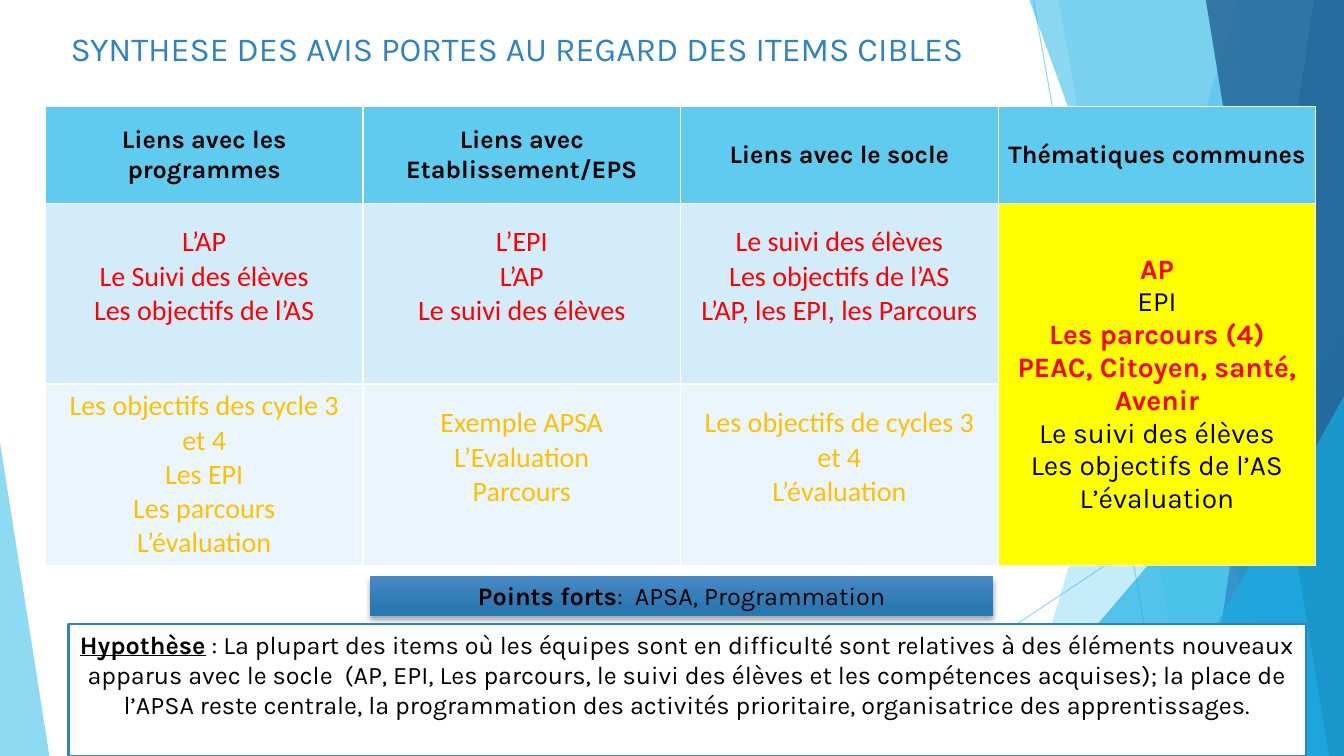
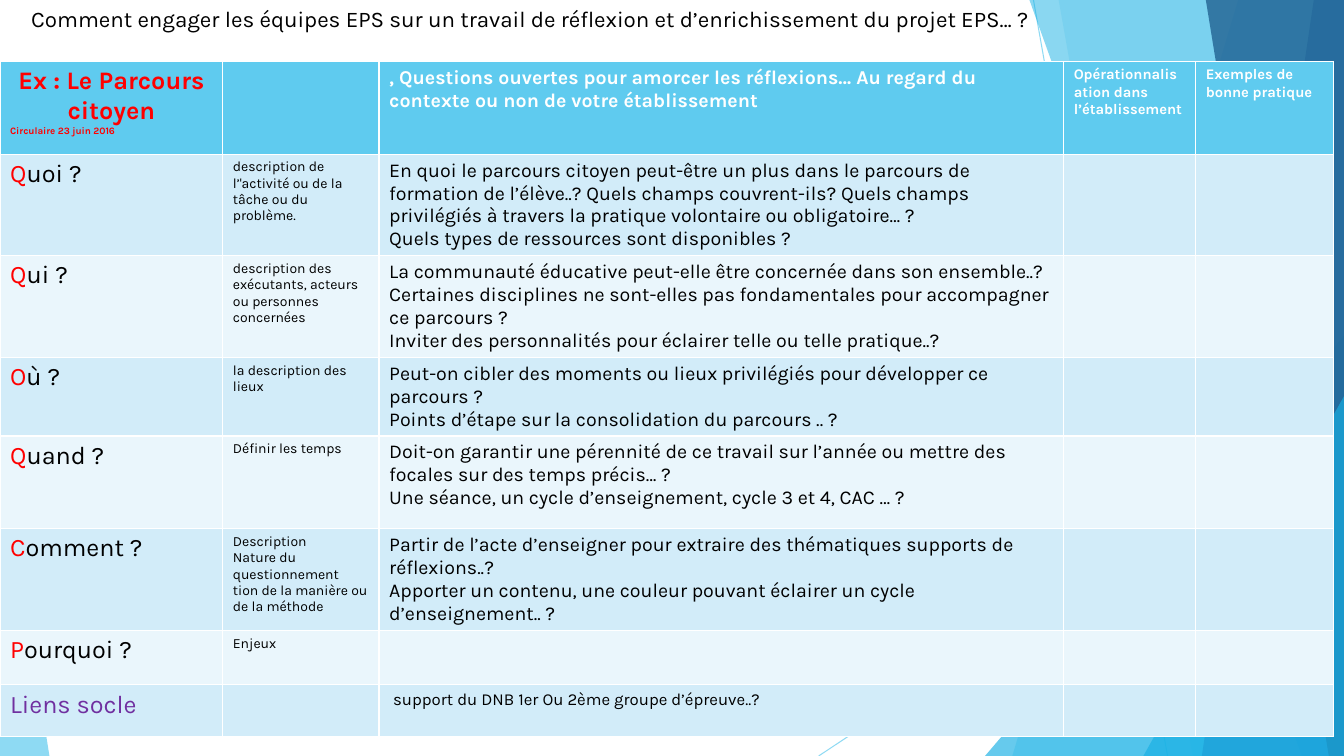
from lxml.etree import SubElement
from pptx import Presentation
from pptx.dml.color import RGBColor
from pptx.enum.shapes import MSO_CONNECTOR, MSO_SHAPE
from pptx.enum.text import MSO_ANCHOR as ANCHOR, MSO_AUTO_SIZE, PP_ALIGN as ALIGN
from pptx.oxml.ns import qn
from pptx.util import Inches, Pt

WIDTH, HEIGHT = 13.33, 7.5
TITLE_ONLY = 5

SKY = RGBColor(0x5F, 0xCB, 0xEF)
CYAN = RGBColor(0x17, 0xB0, 0xE4)
BLUE = RGBColor(0x2E, 0x83, 0xC3)
NAVY = RGBColor(0x22, 0x62, 0x92)
BANNER_TOP = RGBColor(0x4A, 0x8B, 0xC6)
BANNER_BOTTOM = RGBColor(0x2A, 0x78, 0xB2)
BANDS = RGBColor(0xD2, 0xEC, 0xF9), RGBColor(0xEA, 0xF6, 0xFC)
WHITE = RGBColor(0xFF, 0xFF, 0xFF)
BLACK = RGBColor(0, 0, 0)
RED = RGBColor(0xFF, 0, 0)
YELLOW = RGBColor(0xFF, 0xFF, 0)
AMBER = RGBColor(0xFF, 0xC0, 0)
PURPLE = RGBColor(0x70, 0x30, 0xA0)

STRONG = dict(bold=True, color=RED)

THEME_HEADERS = ["Liens avec les programmes", "Liens avec Etablissement/EPS",
                 "Liens avec le socle", "Thématiques communes"]
THEME_ROWS = [
    (RED, [["L’AP", "Le Suivi des élèves", "Les objectifs de l’AS"],
           ["L’EPI", "L’AP", "Le suivi des élèves"],
           ["Le suivi des élèves", "Les objectifs de l’AS", "L’AP, les EPI, les Parcours"]]),
    (AMBER, [["Les objectifs des cycle 3 et 4", "Les EPI", "Les parcours", "L’évaluation"],
             ["Exemple APSA", "L’Evaluation", "Parcours"],
             ["Les objectifs de cycles 3 et 4", "L’évaluation"]]),
]
COMMON_THEMES = [
    [("AP", STRONG)], "EPI", [("Les parcours (4)", STRONG)],
    [("PEAC, Citoyen, santé, Avenir", STRONG)],
    "Le suivi des élèves", "Les objectifs de l’AS", "L’évaluation",
]
HYPOTHESIS = (" : La plupart des items où les équipes sont en difficulté sont relatives à des "
              "éléments nouveaux apparus avec le socle  (AP, EPI, Les parcours, le suivi des "
              "élèves et les compétences acquises); la place de l’APSA reste centrale, la "
              "programmation des activités prioritaire, organisatrice des apprentissages.")

QUESTION_HEADERS = {
    2: (", Questions ouvertes pour amorcer les réflexions… Au regard du contexte ou non "
        "de votre établissement", 14),
    3: ("Opérationnalisation dans l’établissement", 10.5),
    4: ("Exemples de bonne pratique", 10.5),
}
QUESTION_ROWS = [
    ("Quoi ?", ["description de l’'activité ou de la tâche ou du problème."],
     ["En quoi le parcours citoyen peut-être un plus dans le parcours de formation de "
      "l’élève..? Quels champs couvrent-ils? Quels champs privilégiés à travers la pratique "
      "volontaire ou obligatoire… ?",
      "Quels types de ressources sont disponibles ?"]),
    ("Qui ?", ["description des exécutants, acteurs ou personnes concernées"],
     ["La communauté éducative peut-elle être concernée dans son ensemble..?",
      "Certaines disciplines ne sont-elles pas fondamentales pour accompagner ce parcours ?",
      "Inviter des personnalités pour éclairer telle ou telle pratique..?"]),
    ("Où ?", ["la description des lieux"],
     ["Peut-on cibler des moments ou lieux privilégiés pour développer ce parcours ?",
      "Points d’étape sur la consolidation du parcours .. ?"]),
    ("Quand ?", ["Définir les temps"],
     ["Doit-on garantir une pérennité de ce travail sur l’année ou mettre des focales sur "
      "des temps précis… ?",
      "Une séance, un cycle d’enseignement, cycle 3 et 4, CAC … ?"]),
    ("Comment ?", ["Description", "Nature du questionnement",
                   "tion de la manière ou de la méthode"],
     ["Partir de l’acte d’enseigner pour extraire des thématiques supports de réflexions..?",
      "Apporter un contenu, une couleur pouvant éclairer un cycle d’enseignement.. ?"]),
    ("Pourquoi ?", ["Enjeux"], []),
]


def write(tf, paragraphs, align=ALIGN.LEFT, **base):
    """Fill a text frame; a paragraph is a string or a list of (text, format) runs."""
    tf.word_wrap = True
    for i, runs in enumerate(paragraphs):
        p = tf.add_paragraph() if i else tf.paragraphs[0]
        p.alignment = align
        for text, extra in [(runs, {})] if isinstance(runs, str) else runs:
            fmt = dict(font="Karla", size=18, color=BLACK, bold=False, underline=False)
            fmt.update(base, **extra)
            r = p.add_run()
            r.text = text
            r.font.name = fmt["font"]
            r.font.size = Pt(fmt["size"])
            r.font.color.rgb = fmt["color"]
            r.font.bold = fmt["bold"]
            r.font.underline = fmt["underline"]


def set_opacity(sp, percent):
    for color in sp.element.iter(qn("a:srgbClr")):
        SubElement(color, qn("a:alpha"), val=str(percent * 1000))


def paint(sp, color, opacity):
    sp.shadow.inherit = False
    sp.fill.solid()
    sp.fill.fore_color.rgb = color
    sp.line.fill.background()
    set_opacity(sp, opacity)


def add_ray(shapes, *ends):
    line = shapes.add_connector(MSO_CONNECTOR.STRAIGHT, *map(Inches, ends))
    line.line.color.rgb = SKY
    line.line.width = Pt(0.75)
    set_opacity(line, 70)
    SubElement(line.element.spPr, qn("a:effectLst"))


def add_facet(shapes, top_x, bottom_x, color, opacity):
    """Draw a panel from a slanted left edge to the right side of the slide."""
    corners = [(top_x, 0), (WIDTH, 0), (WIDTH, HEIGHT), (bottom_x, HEIGHT)]
    points = [(Inches(x), Inches(y)) for x, y in corners]
    builder = shapes.build_freeform(*points[0])
    builder.add_line_segments(points[1:], close=True)
    paint(builder.convert_to_shape(), color, opacity)


def add_corner(shapes, left, top, width, peak, color, opacity):
    """Draw a triangle standing on the bottom of the slide."""
    sp = shapes.add_shape(MSO_SHAPE.ISOSCELES_TRIANGLE, Inches(left), Inches(top),
                          Inches(width), Inches(HEIGHT - top))
    sp.adjustments[0] = peak
    paint(sp, color, opacity)


def decorate_master(prs, slide):
    """Draw the facets on a slide as one group and move it to the back of the master."""
    group = slide.shapes.add_group_shape()
    shapes = group.shapes
    add_ray(shapes, 10.25, 0, 11.58, HEIGHT)
    add_ray(shapes, WIDTH, 4.03, 8.12, HEIGHT)
    add_facet(shapes, 12.28, 10.04, SKY, 36)
    add_facet(shapes, 10.5, 11.83, SKY, 20)
    add_corner(shapes, 9.77, 3.33, 3.56, 1, CYAN, 66)
    add_facet(shapes, 10.21, 12.91, CYAN, 50)
    add_facet(shapes, 13.03, 11.92, BLUE, 70)
    add_facet(shapes, 11.96, 13.18, NAVY, 80)
    add_corner(shapes, 11.34, 3.93, 1.99, 1, CYAN, 66)
    add_corner(shapes, 0, 4.39, 0.49, 0, SKY, 70)
    for number, props in enumerate(group.element.xpath(".//p:cNvPr"), start=101):
        props.set("id", str(number))
    prs.slide_master.shapes.element.insert(2, group.element)


def set_title(slide, text, box, **fmt):
    title = slide.shapes.title
    title.left, title.top, title.width, title.height = map(Inches, box)
    tf = title.text_frame
    tf.auto_size = MSO_AUTO_SIZE.NONE
    tf.vertical_anchor = ANCHOR.TOP
    write(tf, [text], **fmt)


def add_grid(slide, left, top, columns, rows):
    """Add a table with a sky-blue header and two alternating row colours."""
    frame = slide.shapes.add_table(len(rows), len(columns), Inches(left), Inches(top),
                                   Inches(sum(columns)), Inches(sum(rows)))
    table = frame.table
    for column, width in zip(table.columns, columns):
        column.width = Inches(width)
    for i, (row, height) in enumerate(zip(table.rows, rows)):
        row.height = Inches(height)
        for cell in row.cells:
            cell.fill.solid()
            cell.fill.fore_color.rgb = BANDS[(i - 1) % 2] if i else SKY
    return table


def add_theme_table(slide, left, top):
    table = add_grid(slide, left, top, [3.15] * 4, [0.96, 1.79, 1.79])
    for col, header in enumerate(THEME_HEADERS):
        write(table.cell(0, col).text_frame, [header], ALIGN.CENTER, bold=True)
    for row, (color, cells) in enumerate(THEME_ROWS, start=1):
        for col, lines in enumerate(cells):
            cell = table.cell(row, col)
            write(cell.text_frame, lines, ALIGN.CENTER, font="Calibri", size=20, color=color)
            if len(lines) < 4:
                cell.margin_bottom = Inches(0.39)
    common = table.cell(1, 3)
    common.merge(table.cell(2, 3))
    common.fill.fore_color.rgb = YELLOW
    write(common.text_frame, COMMON_THEMES, ALIGN.CENTER, size=20)
    for row in table.rows:
        for cell in row.cells:
            cell.vertical_anchor = ANCHOR.MIDDLE


def add_box(slide, box, runs, anchor):
    sp = slide.shapes.add_shape(MSO_SHAPE.RECTANGLE, *map(Inches, box))
    sp.shadow.inherit = False
    sp.text_frame.vertical_anchor = anchor
    write(sp.text_frame, [runs], ALIGN.CENTER)
    return sp


def add_strengths_banner(slide, box):
    sp = add_box(slide, box, [("Points forts", dict(bold=True)),
                              (":  APSA, Programmation", {})], ANCHOR.MIDDLE)
    sp.line.fill.background()
    sp.fill.gradient()
    sp.fill.gradient_angle = 270
    stops = [(0, BANNER_TOP), (0.78, BANNER_BOTTOM)]
    for stop, (position, color) in zip(sp.fill.gradient_stops, stops):
        stop.position = position
        stop.color.rgb = color
    effects = sp.element.spPr.find(qn("a:effectLst"))
    shadow = SubElement(effects, qn("a:outerShdw"), blurRad=str(Pt(4)), dist=str(Pt(3)),
                        dir="5400000", rotWithShape="0")
    color = SubElement(shadow, qn("a:srgbClr"), val=str(BLACK))
    SubElement(color, qn("a:alpha"), val="35000")


def add_hypothesis(slide, box):
    sp = add_box(slide, box, [("Hypothèse", dict(bold=True, underline=True)),
                              (HYPOTHESIS, {})], ANCHOR.TOP)
    sp.fill.solid()
    sp.fill.fore_color.rgb = WHITE
    sp.line.color.rgb = BLUE
    sp.line.width = Pt(1.5)


def add_question_table(slide, left, top):
    table = add_grid(slide, left, top, [2.21, 1.55, 6.79, 1.31, 1.37],
                     [0.92, 0.92, 0.98, 0.66, 0.92, 1.01, 0.54, 0.51])
    corner = table.cell(0, 0).text_frame
    write(corner, ["Ex : Le Parcours citoyen",
                   [("Circulaire 23 juin 2016", dict(size=7))]], **STRONG)
    corner.paragraphs[0].alignment = ALIGN.CENTER
    for col, (header, size) in QUESTION_HEADERS.items():
        write(table.cell(0, col).text_frame, [header], size=size, bold=True, color=WHITE)
    for row, (word, hints, questions) in enumerate(QUESTION_ROWS, start=1):
        initial = (word[0], dict(color=RED))
        write(table.cell(row, 0).text_frame, [[initial, (word[1:], {})]])
        write(table.cell(row, 1).text_frame, hints, size=10)
        write(table.cell(row, 2).text_frame, questions, size=14)
    last = len(table.rows) - 1
    write(table.cell(last, 0).text_frame, ["Liens socle"], color=PURPLE)
    write(table.cell(last, 2).text_frame,
          [" support du DNB 1er Ou 2ème groupe d’épreuve..?"], size=12)


def build_summary(slide):
    set_title(slide, "SYNTHESE DES AVIS PORTES AU REGARD DES ITEMS CIBLES",
              (0.6, 0.23, 9.16, 0.5), size=24, color=BLUE)
    add_theme_table(slide, 0.45, 1.06)
    add_strengths_banner(slide, (3.67, 5.71, 6.18, 0.4))
    add_hypothesis(slide, (0.68, 6.19, 12.27, 1.31))


def build_questions(slide):
    set_title(slide, "Comment engager les équipes EPS sur un travail de réflexion et "
              "d’enrichissement du projet EPS… ?", (0.21, 0, 12.59, 0.37), size=16)
    add_question_table(slide, 0, 0.61)


def main():
    prs = Presentation()
    prs.slide_width, prs.slide_height = Inches(WIDTH), Inches(HEIGHT)
    layout = prs.slide_layouts[TITLE_ONLY]
    summary, questions = (prs.slides.add_slide(layout) for _ in range(2))
    decorate_master(prs, summary)
    build_summary(summary)
    build_questions(questions)
    prs.save("out.pptx")


if __name__ == "__main__":
    main()
